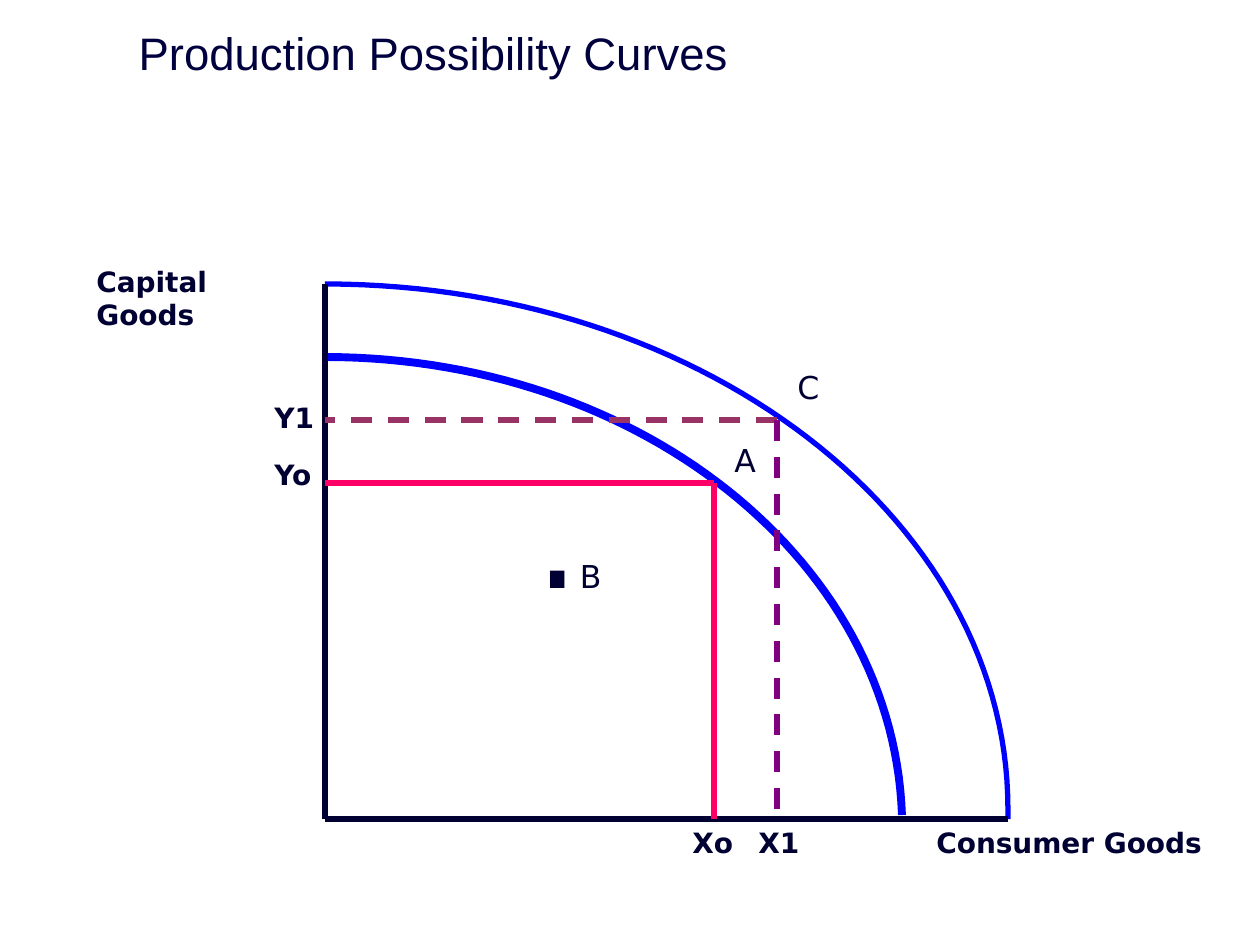
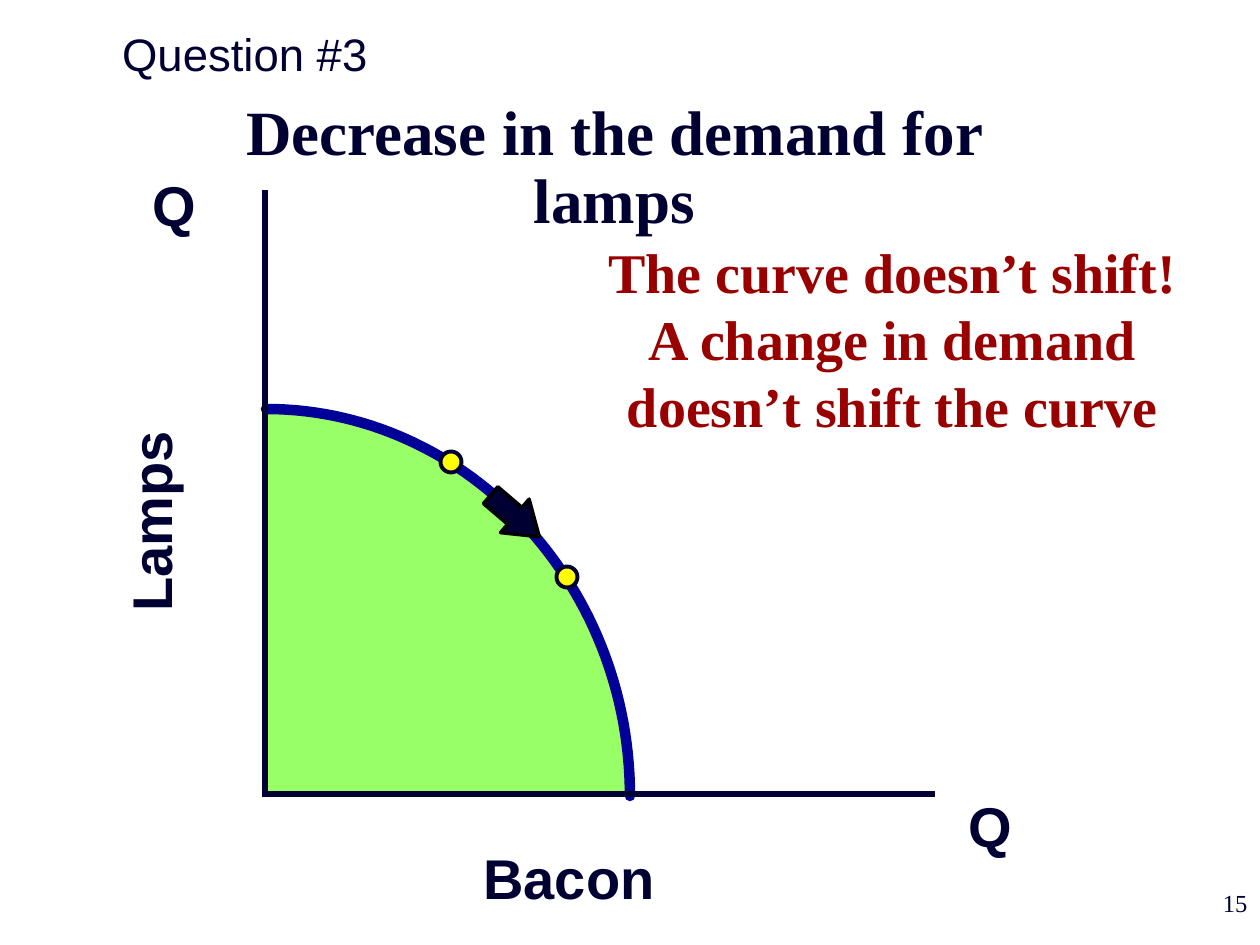
from lxml import etree
from pptx import Presentation
from pptx.dml.color import RGBColor
from pptx.enum.dml import MSO_LINE
from pptx.enum.shapes import MSO_CONNECTOR, MSO_SHAPE
from pptx.enum.text import MSO_ANCHOR, MSO_AUTO_SIZE, PP_ALIGN
from pptx.oxml.ns import qn
from pptx.util import Pt

STRAIGHT = MSO_CONNECTOR.STRAIGHT
OVAL, RIGHT_ARROW = MSO_SHAPE.OVAL, MSO_SHAPE.RIGHT_ARROW
LEFT, CENTER, RIGHT = PP_ALIGN.LEFT, PP_ALIGN.CENTER, PP_ALIGN.RIGHT
TOP, MIDDLE = MSO_ANCHOR.TOP, MSO_ANCHOR.MIDDLE
NO_AUTOFIT = MSO_AUTO_SIZE.NONE
DASH = MSO_LINE.DASH

EMU_PER_PX = 914400 / 126
TITLE_ONLY = 5
CURVE_STEPS = 60

NAVY = RGBColor(0x00, 0x00, 0x32)
TITLE_NAVY = RGBColor(0x00, 0x00, 0x3E)
BLUE = RGBColor(0x00, 0x00, 0xFF)
DARK_BLUE = RGBColor(0x00, 0x00, 0x99)
PINK = RGBColor(0xFF, 0x00, 0x66)
PLUM = RGBColor(0x99, 0x33, 0x66)
PURPLE = RGBColor(0x80, 0x00, 0x80)
GREEN = RGBColor(0x99, 0xFF, 0x66)
YELLOW = RGBColor(0xFF, 0xFF, 0x00)
RED = RGBColor(0x99, 0x00, 0x00)
BLACK = RGBColor(0x00, 0x00, 0x00)

SANS, ARIAL, SERIF = "DejaVu Sans", "Arial", "Times New Roman"

ORIGIN_X, ORIGIN_Y, AXIS_TOP, AXIS_END = 325, 819, 284, 1008
POINT_A, POINT_C = (714, 483), (777, 420)

GOODS_LINES = [
    ((ORIGIN_X, AXIS_TOP), (ORIGIN_X, ORIGIN_Y), NAVY, None),
    ((ORIGIN_X, ORIGIN_Y), (AXIS_END, ORIGIN_Y), NAVY, None),
]
for point, across, down, dash in [(POINT_A, PINK, PINK, None), (POINT_C, PLUM, PURPLE, DASH)]:
    GOODS_LINES += [
        (point, (ORIGIN_X, point[1]), across, dash),
        (point, (point[0], ORIGIN_Y), down, dash),
    ]

GOODS_CURVES = [
    ([(325, 357), (638, 357), (893, 559), (902, 815)], [], 4.5),
    ([(325, 284), (702, 284), (1008, 519), (1008, 809)], [(1008, 819)], 3),
]

AXIS_LABELS = [
    ("Consumer Goods", (924, 819, 291, 47)),
    ("Yo", (262, 451, 65, 47)),
    ("Y1", (262, 394, 65, 47)),
    ("Xo", (680, 819, 65, 47)),
    ("X1", (746, 819, 67, 47)),
]
POINT_LABELS = [
    ("A", (722, 435, 54, 63)),
    ("C", (785, 362, 54, 63)),
    ([(".", 80), ("B", 18)], (523, 442, 106, 180)),
]

LAMPS_CURVE = [(266, 409), (466, 409), (630, 583), (630, 796)]
LAMPS_CORNER = (266, 796)
LAMPS_AXES = [((265, 190), (265, 797)), ((263, 794), (935, 794))]
LAMPS_POINTS = [(567, 577), (451, 462)]
POINT_SIZE = 21
LAMPS_LABELS = [
    ("Q", (140, 164, 68, 79), {}),
    ("Q", (956, 785, 68, 79), {}),
    ("Lamps", (47, 481, 207, 81), {"align": CENTER, "rotation": 270}),
    ("Bacon", (471, 837, 213, 81), {"wrap": True}),
]
VERDICT = ["The curve doesn’t shift!", "A change in demand doesn’t shift the curve"]


def emu(*lengths):
    return [round(length * EMU_PER_PX) for length in lengths]


def write_text(shape, text, *, font=ARIAL, size=32, color=NAVY, bold=False, align=LEFT,
               anchor=TOP, wrap=False, spacing=None):
    frame = shape.text_frame
    frame.auto_size = NO_AUTOFIT
    frame.word_wrap = wrap
    frame.vertical_anchor = anchor
    paragraphs = text if isinstance(text, list) and isinstance(text[0], (str, list)) else [text]
    for index, content in enumerate(paragraphs):
        paragraph = frame.add_paragraph() if index else frame.paragraphs[0]
        paragraph.alignment = align
        if spacing:
            paragraph.line_spacing = spacing
        runs = [(content, size)] if isinstance(content, str) else content
        for words, run_size in runs:
            run = paragraph.add_run()
            run.text = words
            run.font.name = font
            run.font.size = Pt(run_size)
            run.font.bold = bold
            run.font.color.rgb = color


def add_text(slide, text, box, rotation=0, **text_format):
    shape = slide.shapes.add_textbox(*emu(*box))
    shape.rotation = rotation
    write_text(shape, text, **text_format)


def add_titled_slide(presentation, title, box, **text_format):
    slide = presentation.slides.add_slide(presentation.slide_layouts[TITLE_ONLY])
    shape = slide.shapes.title
    shape.left, shape.top, shape.width, shape.height = emu(*box)
    write_text(shape, title, size=26, anchor=MIDDLE, wrap=True, **text_format)
    return slide


def add_line(slide, start, end, color, width, dash=None):
    connector = slide.shapes.add_connector(STRAIGHT, *emu(*start, *end))
    connector.line.color.rgb = color
    connector.line.width = Pt(width)
    if dash:
        connector.line.dash_style = dash
    etree.SubElement(connector._element.spPr, qn("a:effectLst"))


def paint(shape, fill=None, line=None, width=1):
    shape.shadow.inherit = False
    if fill is None:
        shape.fill.background()
    else:
        shape.fill.solid()
        shape.fill.fore_color.rgb = fill
    if line is None:
        shape.line.fill.background()
    else:
        shape.line.color.rgb = line
        shape.line.width = Pt(width)


def curve_points(controls):
    points = []
    for step in range(CURVE_STEPS + 1):
        t = step / CURVE_STEPS
        weights = ((1 - t) ** 3, 3 * t * (1 - t) ** 2, 3 * t * t * (1 - t), t ** 3)
        points.append(tuple(sum(weight * control[axis] for weight, control in zip(weights, controls))
                            for axis in (0, 1)))
    return points


def add_outline(slide, points, close=False, **colors):
    start, *rest = [emu(*point) for point in points]
    builder = slide.shapes.build_freeform(*start)
    builder.add_line_segments(rest, close=close)
    shape = builder.convert_to_shape()
    paint(shape, **colors)
    return shape


def build_goods_slide(presentation):
    slide = add_titled_slide(presentation, "Production Possibility Curves",
                             (126, 20, 1134, 64), color=TITLE_NAVY)
    for controls, tail, width in GOODS_CURVES:
        add_outline(slide, curve_points(controls) + tail, line=BLUE, width=width)
    for start, end, color, dash in GOODS_LINES:
        add_line(slide, start, end, color, 3, dash)
    add_text(slide, "Capital Goods", (84, 258, 235, 47), font=SANS, size=16, bold=True, wrap=True)
    for text, box in AXIS_LABELS:
        add_text(slide, text, box, font=SANS, size=16, bold=True)
    for text, box in POINT_LABELS:
        runs = [text] if isinstance(text, list) else text
        add_text(slide, runs, box, font=SANS, size=18)


def build_lamps_slide(presentation):
    slide = add_titled_slide(presentation, "Question #3", (0, 19, 490, 68), align=CENTER)
    arc = curve_points(LAMPS_CURVE)
    add_outline(slide, arc + [LAMPS_CORNER], close=True, fill=GREEN)
    curve = add_outline(slide, arc, line=DARK_BLUE, width=6)
    curve.line._get_or_add_ln().set("cap", "rnd")
    add_text(slide, "Decrease in the demand for lamps", (147, 95, 935, 150), font=SERIF, size=36,
             bold=True, align=CENTER, wrap=True, spacing=0.9)
    for start, end in LAMPS_AXES:
        add_line(slide, start, end, NAVY, 4)
    for text, box, options in LAMPS_LABELS:
        add_text(slide, text, box, bold=True, **options)
    arrow = slide.shapes.add_shape(RIGHT_ARROW, *emu(483, 494, 64, 44))
    arrow.adjustments[0], arrow.adjustments[1] = 0.5, 0.73
    arrow.rotation = 40.5
    paint(arrow, fill=NAVY, line=BLACK, width=2)
    for x, y in LAMPS_POINTS:
        corner = (x - POINT_SIZE / 2, y - POINT_SIZE / 2)
        dot = slide.shapes.add_shape(OVAL, *emu(*corner, POINT_SIZE, POINT_SIZE))
        paint(dot, fill=YELLOW, line=NAVY, width=2.25)
    add_text(slide, VERDICT, (588, 231, 609, 214), font=SERIF, color=RED, bold=True,
             align=CENTER, wrap=True)
    add_text(slide, "15", (998, 882, 262, 63), font=SERIF, size=14, align=RIGHT, wrap=True)


def main():
    presentation = Presentation()
    presentation.slide_width, presentation.slide_height = emu(1260, 945)
    build_goods_slide(presentation)
    build_lamps_slide(presentation)
    presentation.save("out.pptx")


if __name__ == "__main__":
    main()
